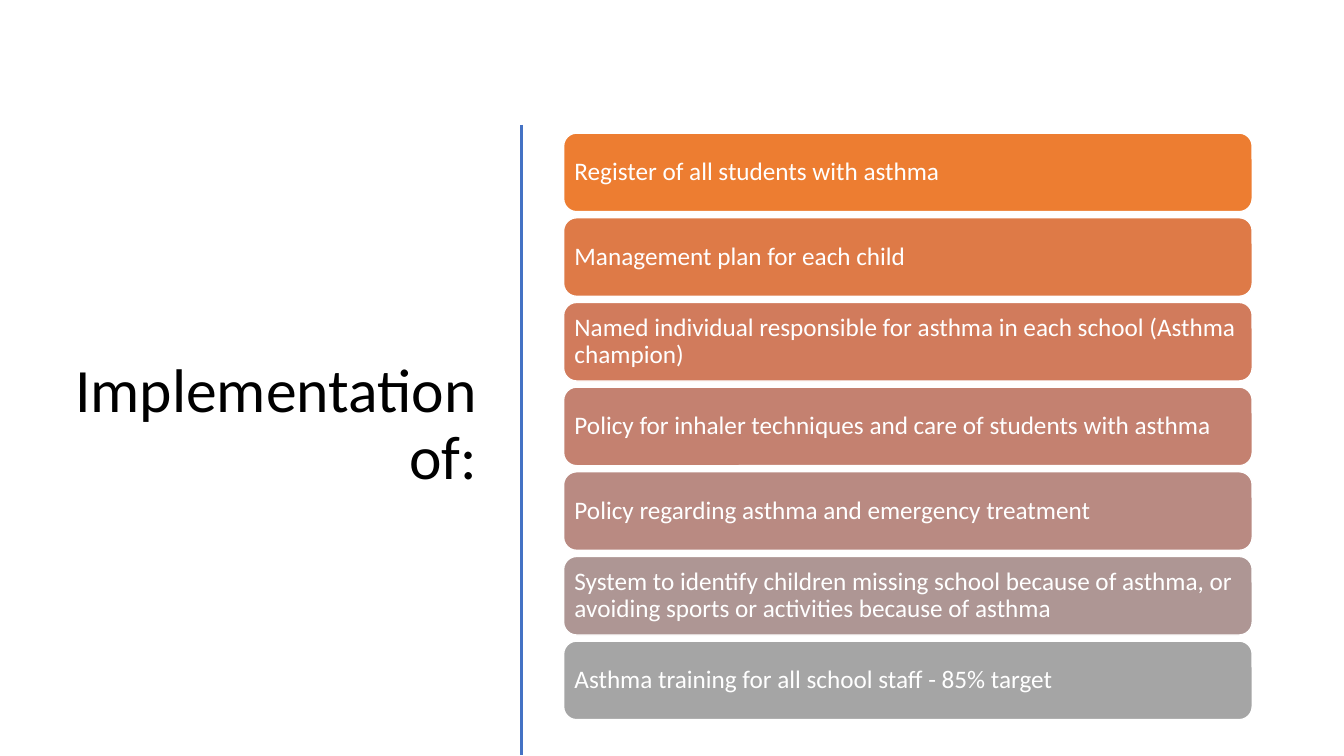
from dataclasses import dataclass

from lxml.etree import SubElement
from pptx import Presentation
from pptx.dml.color import RGBColor
from pptx.enum.shapes import MSO_CONNECTOR, MSO_SHAPE
from pptx.enum.text import MSO_ANCHOR as Anchor, PP_ALIGN as Align
from pptx.oxml.ns import qn
from pptx.slide import Slide
from pptx.text.text import TextFrame
from pptx.util import Pt

PX = 9144  # EMU per px, 100 px to the inch
FONT = "Calibri"
WHITE = "FFFFFF"
BLACK = "000000"
DIVIDER_COLOR = "4472C4"

BAR_LEFT, BAR_TOP = 559, 132
BAR_WIDTH, BAR_HEIGHT = 683, 78
BAR_PITCH = 84
BAR_INSET = 7


@dataclass
class Measure:
    text: str
    fill: str


MEASURES = [
    Measure("Register of all students with asthma", "ED7D31"),
    Measure("Management plan for each child", "DE7A47"),
    Measure("Named individual responsible for asthma in each school (Asthma champion)", "D17B5C"),
    Measure("Policy for inhaler techniques and care of students with asthma", "C48170"),
    Measure("Policy regarding asthma and emergency treatment", "B98A82"),
    Measure("System to identify children missing school because of asthma, "
            "or avoiding sports or activities because of asthma", "AE9694"),
    Measure("Asthma training for all school staff - 85% target", "A5A5A5"),
]


def px(length: int) -> int:
    return length * PX


def color(value: str) -> RGBColor:
    return RGBColor.from_string(value)


def write_text(frame: TextFrame, text: str, size: int, font_color: str, align: Align) -> None:
    frame.word_wrap = True
    frame.vertical_anchor = Anchor.MIDDLE
    paragraph = frame.paragraphs[0]
    paragraph.text = text
    paragraph.alignment = align
    paragraph.line_spacing = 0.9
    paragraph.font.name = FONT
    paragraph.font.size = Pt(size)
    paragraph.font.color.rgb = color(font_color)


def add_title(slide: Slide) -> None:
    title = slide.shapes.add_textbox(px(52), px(117), px(431), px(611))
    write_text(title.text_frame, "Implementation of:", 44, BLACK, Align.RIGHT)


def add_divider(slide: Slide) -> None:
    divider = slide.shapes.add_connector(
        MSO_CONNECTOR.STRAIGHT, px(517), px(124), px(517), px(749))
    divider.line.color.rgb = color(DIVIDER_COLOR)
    divider.line.width = Pt(2)
    SubElement(divider._element.spPr, qn("a:effectLst"))


def add_bar(slide: Slide, measure: Measure, top: int) -> None:
    bar = slide.shapes.add_shape(
        MSO_SHAPE.ROUNDED_RECTANGLE, px(BAR_LEFT), px(top), px(BAR_WIDTH), px(BAR_HEIGHT))
    bar.shadow.inherit = False
    bar.fill.solid()
    bar.fill.fore_color.rgb = color(measure.fill)
    bar.line.color.rgb = color(WHITE)
    bar.line.width = Pt(1)
    frame = bar.text_frame
    frame.margin_left = frame.margin_right = px(BAR_INSET)
    frame.margin_top = frame.margin_bottom = px(BAR_INSET)
    write_text(frame, measure.text, 18, WHITE, Align.LEFT)


def main() -> None:
    presentation = Presentation()
    presentation.slide_width = px(1333)
    presentation.slide_height = px(750)
    slide = presentation.slides.add_slide(presentation.slide_layouts[6])

    # Heading on the left, set off by a vertical rule
    add_title(slide)
    add_divider(slide)

    # Stack of measures on the right
    for index, measure in enumerate(MEASURES):
        add_bar(slide, measure, BAR_TOP + index * BAR_PITCH)

    presentation.save("out.pptx")


if __name__ == "__main__":
    main()
